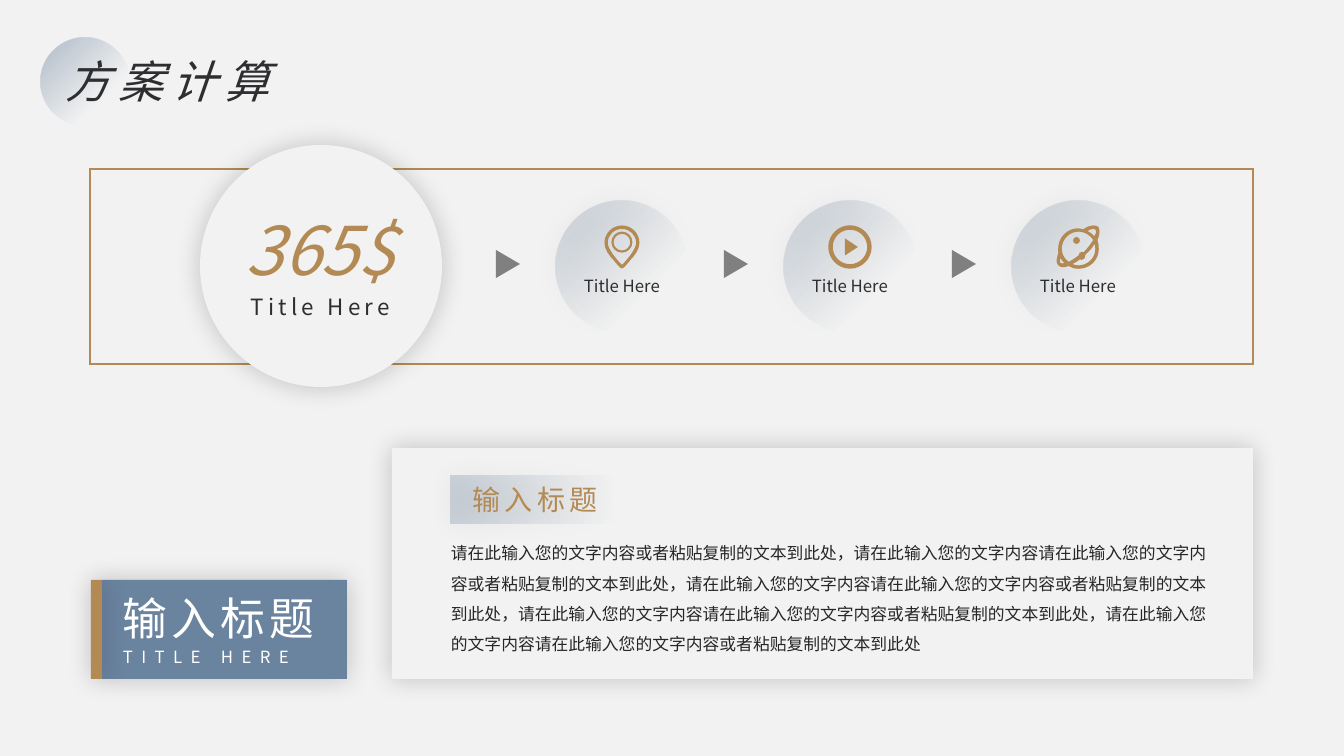
from lxml import etree
from pptx import Presentation
from pptx.dml.color import RGBColor
from pptx.enum.shapes import MSO_SHAPE
from pptx.enum.text import MSO_ANCHOR, PP_ALIGN
from pptx.oxml.ns import nsdecls, qn
from pptx.util import Pt

OVAL, RECTANGLE = MSO_SHAPE.OVAL, MSO_SHAPE.RECTANGLE
TRIANGLE = MSO_SHAPE.ISOSCELES_TRIANGLE
LEFT, CENTER = PP_ALIGN.LEFT, PP_ALIGN.CENTER

SLIDE_SIZE = (1344, 756)
EMU_PER_PX = 12192000 / 1344
FONT = "Noto Sans CJK SC"
COLORS = {
    "paper": "F2F2F2", "gold": "B38A54", "blue": "6A839F", "arrow": "808080",
    "ink": "2E2E30", "body": "262626", "white": "FFFFFF", "shadow": "000000",
}

TITLE = "方案计算"
PRICE = "365$"
PRICE_LABEL = "Title Here"
STEPS = [("pin", "Title Here"), ("play", "Title Here"), ("planet", "Title Here")]
BADGE_TITLE, BADGE_SUBTITLE = "输入标题", "TITLE HERE"
CARD_TITLE = "输入标题"
CARD_BODY = (
    "请在此输入您的文字内容或者粘贴复制的文本到此处，"
    "请在此输入您的文字内容请在此输入您的文字内容或者粘贴复制的文本到此处，"
    "请在此输入您的文字内容请在此输入您的文字内容或者粘贴复制的文本到此处，"
    "请在此输入您的文字内容请在此输入您的文字内容或者粘贴复制的文本到此处，"
    "请在此输入您的文字内容请在此输入您的文字内容或者粘贴复制的文本到此处"
)

STEP_LEFT, STEP_TOP, STEP_PITCH, STEP_SIZE = 556, 201, 228, 132
ICON_CENTER_Y = 247
ICON_UNITS_PER_PX = 10
ROUNDNESS = 0.55

# Curves are a start point followed by two handles and an end point per segment.
PIN_OUTER_HALF = [(0, -215), (97, -215), (175, -137), (175, -40), (175, 20), (130, 85),
                  (85, 130), (45, 180), (15, 215), (0, 215)]
PIN_INNER_HALF = [(0, -180), (80, -180), (142, -120), (142, -40), (142, 20), (50, 130),
                  (0, 180)]
PLAY_TRIANGLE = [(-50, -85), (80, 0), (-50, 85)]
PLANET_CURVES = [
    [(145, -215), (170, -220), (190, -210), (205, -200), (215, -180), (215, -165),
     (215, -150), (215, -125), (208, -100), (195, -70), (205, -40), (208, -10),
     (208, 20), (208, 130), (120, 218), (5, 218), (-35, 218), (-65, 208),
     (-95, 190), (-115, 198), (-130, 203), (-145, 203), (-165, 203), (-185, 198),
     (-195, 185), (-225, 160), (-215, 120), (-197, 60), (-198, 45), (-198, 30),
     (-198, 15), (-198, -95), (-110, -187), (5, -187), (25, -187), (40, -182),
     (55, -177), (85, -200), (115, -213), (145, -215)],
    [(-175, 110), (-185, 130), (-185, 150), (-175, 160), (-165, 168), (-155, 168),
     (-137, 160), (-155, 143), (-165, 128), (-175, 110)],
    [(165, -30), (145, 10), (115, 40), (75, 75), (80, 105), (60, 130), (35, 130),
     (30, 128), (25, 125), (22, 122), (-5, 140), (-25, 160), (-55, 170),
     (-35, 180), (-15, 184), (5, 184), (95, 184), (173, 110), (173, 20),
     (173, 0), (172, -15), (165, -30)],
    [(5, -153), (-85, -153), (-155, -80), (-163, 10), (-163, 60), (-145, 100),
     (-115, 130), (-108, 138), (-100, 145), (-92, 148), (-65, 135), (-35, 115),
     (5, 85), (5, 65), (20, 50), (42, 48), (48, 48), (52, 49), (57, 52),
     (95, 15), (125, -30), (153, -70), (145, -80), (135, -92), (125, -103),
     (90, -135), (50, -153), (5, -153)],
    [(148, -180), (135, -180), (115, -172), (95, -160), (120, -148), (140, -133),
     (157, -115), (160, -112), (162, -110), (165, -108), (175, -130), (182, -145),
     (183, -152), (183, -165), (180, -170), (172, -177), (165, -180), (158, -180),
     (148, -180)],
]


def px(value):
    return round(value * EMU_PER_PX)


def rgb(name):
    return RGBColor.from_string(COLORS[name])


def mirrored(half):
    """Close a right-hand half curve with its reflection."""
    return half + [(-x, y) for x, y in reversed(half[:-1])]


def circle(center_x, center_y, radius):
    handle = round(radius * ROUNDNESS)
    half = [(0, -radius), (handle, -radius), (radius, -handle), (radius, 0),
            (radius, handle), (handle, radius), (0, radius)]
    return [(center_x + x, center_y + y) for x, y in mirrored(half)]


ICONS = {
    "pin": [mirrored(PIN_OUTER_HALF), mirrored(PIN_INNER_HALF),
            circle(0, -48, 105), circle(0, -48, 83)],
    "play": [circle(0, 0, 217), circle(0, 0, 172), PLAY_TRIANGLE],
    "planet": PLANET_CURVES + [circle(-15, -65, 35)],
}


def add_shape(kind, box, fill=None, line=None, shadow=False, fade=None):
    """Add a preset shape; fade is (opacity %, end stop %, angle) of a blue gradient."""
    shape = slide.shapes.add_shape(kind, *map(px, box))
    shape.shadow.inherit = False
    if fill:
        shape.fill.solid()
        shape.fill.fore_color.rgb = rgb(fill)
    else:
        shape.fill.background()
    if line:
        shape.line.color.rgb = rgb(line)
        shape.line.width = Pt(2)
        etree.SubElement(shape.line._ln, qn("a:miter")).set("lim", "800000")
    else:
        shape.line.fill.background()
    properties = shape._element.spPr
    if fade:
        opacity, end, angle = fade
        stops = "".join(
            f'<a:gs pos="{stop * 1000}"><a:srgbClr val="{COLORS["blue"]}">'
            f'<a:alpha val="{alpha * 1000}"/></a:srgbClr></a:gs>'
            for stop, alpha in ((0, opacity), (end, 0)))
        gradient = etree.fromstring(
            f'<a:gradFill {nsdecls("a")} rotWithShape="1"><a:gsLst>{stops}</a:gsLst>'
            f'<a:lin ang="{angle * 60000}" scaled="0"/></a:gradFill>')
        properties.replace(properties.find(qn("a:noFill")), gradient)
    if shadow:
        properties.find(qn("a:effectLst")).append(etree.fromstring(
            f'<a:outerShdw {nsdecls("a")} blurRad="{Pt(18)}" dist="0" dir="0" algn="ctr" '
            f'rotWithShape="0"><a:srgbClr val="{COLORS["shadow"]}">'
            '<a:alpha val="20000"/></a:srgbClr></a:outerShdw>'))
    return shape


def write(shape, text, size, color, align=LEFT, spacing=0, italic=False, leading=1.0):
    frame = shape.text_frame
    frame.word_wrap = True
    frame.vertical_anchor = MSO_ANCHOR.TOP
    frame.text = text
    paragraph = frame.paragraphs[0]
    paragraph.alignment = align
    paragraph.line_spacing = leading
    run = paragraph.runs[0]
    run.font.size = Pt(size)
    run.font.italic = italic
    run.font.color.rgb = rgb(color)
    run.font.name = FONT
    run_properties = run._r.get_or_add_rPr()
    run_properties.set("spc", str(spacing * 100))
    etree.SubElement(run_properties, qn("a:ea")).set("typeface", FONT)


def add_text(box, *args, **style):
    write(slide.shapes.add_textbox(*map(px, box)), *args, **style)


def add_icon(name, center_x, center_y):
    """Draw an icon; outlines that end where they start become cubic curves."""
    outlines = ICONS[name]
    builder = slide.shapes.build_freeform(*outlines[0][0], scale=EMU_PER_PX / ICON_UNITS_PER_PX)
    for index, outline in enumerate(outlines):
        if index:
            builder.move_to(*outline[0])
        builder.add_line_segments(outline[1:])
    icon = builder.convert_to_shape(px(center_x), px(center_y))
    segments = list(icon._element.iter(qn("a:lnTo")))
    for outline in outlines:
        count = len(outline) - 1
        current, segments = segments[:count], segments[count:]
        if outline[0] != outline[-1]:
            continue
        for first in range(0, count, 3):
            bezier = etree.Element(qn("a:cubicBezTo"))
            current[first].addprevious(bezier)
            for segment in current[first:first + 3]:
                bezier.append(segment[0])
                segment.getparent().remove(segment)
    icon.shadow.inherit = False
    icon.fill.solid()
    icon.fill.fore_color.rgb = rgb("gold")
    icon.line.fill.background()


presentation = Presentation()
presentation.slide_width, presentation.slide_height = map(px, SLIDE_SIZE)
slide = presentation.slides.add_slide(presentation.slide_layouts[5])
slide.background.fill.solid()
slide.background.fill.fore_color.rgb = rgb("paper")

add_shape(OVAL, (41, 38, 88, 88), fade=(50, 69, 45))
title = slide.shapes.title
title.left, title.top, title.width, title.height = map(px, (55, 49, 316, 64))
write(title, TITLE, 32, "ink", spacing=6, italic=True)
slide.shapes._spTree.append(title._element)

add_shape(RECTANGLE, (90, 169, 1163, 195), fill="paper", line="gold")
add_shape(OVAL, (200, 145, 242, 242), fill="paper", shadow=True)
for index, (icon_name, label) in enumerate(STEPS):
    left = STEP_LEFT + index * STEP_PITCH
    add_shape(TRIANGLE, (left - 62, 252, 28, 24), fill="arrow").rotation = 90
    add_shape(OVAL, (left, STEP_TOP, STEP_SIZE, STEP_SIZE), shadow=True, fade=(29, 69, 45))
    add_icon(icon_name, left + STEP_SIZE / 2, ICON_CENTER_Y)
    add_text((left, 271, STEP_SIZE, 30), label, 12, "ink", align=CENTER)
add_text((222, 288, 197, 37), PRICE_LABEL, 16, "ink", align=CENTER, spacing=3)
add_text((222, 203, 197, 91), PRICE, 48, "gold", align=CENTER, italic=True)

add_shape(RECTANGLE, (102, 580, 245, 99), fill="blue", shadow=True)
add_shape(RECTANGLE, (91, 580, 11, 99), fill="gold", shadow=True)
add_text((113, 586, 257, 64), BADGE_TITLE, 32, "white", spacing=3)
add_text((113, 642, 257, 30), BADGE_SUBTITLE, 12, "white", spacing=6)

add_shape(RECTANGLE, (392, 448, 861, 231), fill="paper", shadow=True)
add_text((441, 528, 785, 131), CARD_BODY, 12, "body", leading=1.5)
add_shape(RECTANGLE, (451, 476, 165, 48), shadow=True, fade=(29, 100, 0))
add_text((458, 478, 154, 43), CARD_TITLE, 20, "gold", align=CENTER, spacing=3)

presentation.save("out.pptx")
